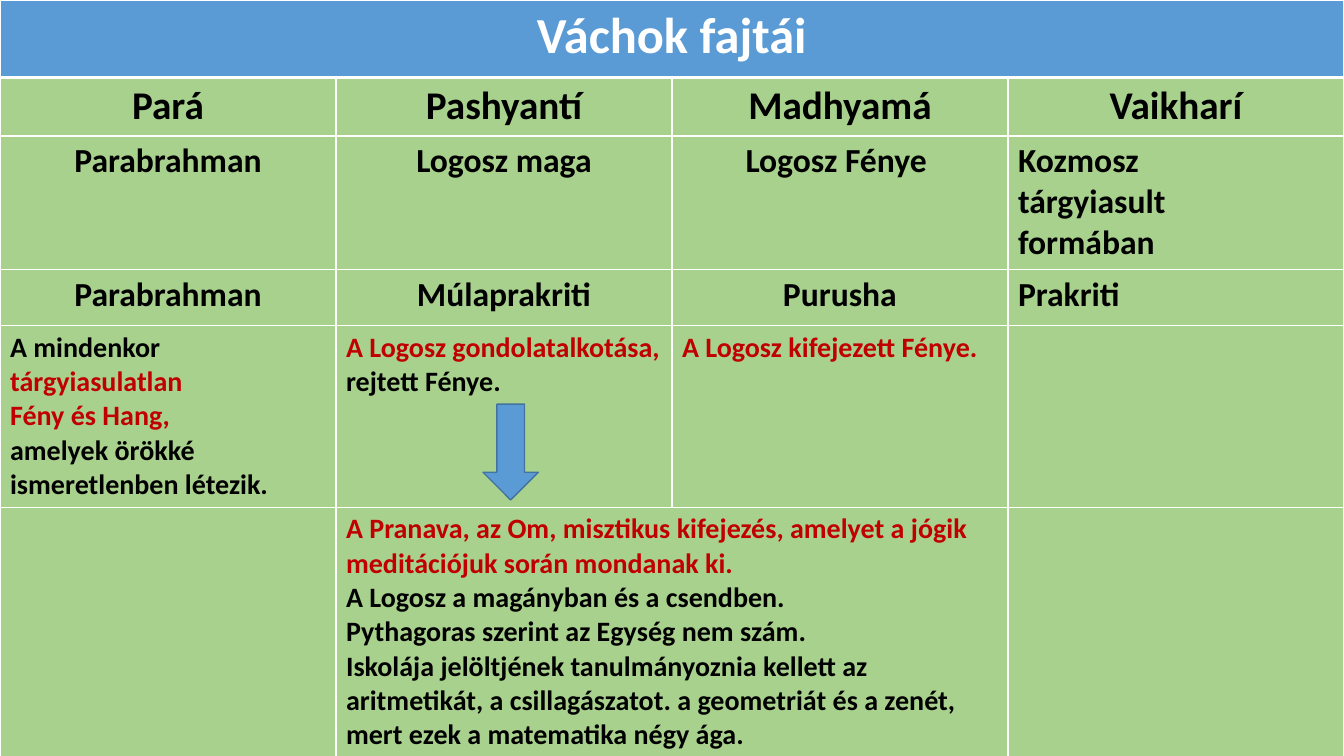
from lxml import etree
from pptx import Presentation
from pptx import util as u
from pptx.dml.color import RGBColor
from pptx.enum import shapes, text
from pptx.oxml import ns

HUES = {"sky": "00B0F0", "blue": "5B9BD5", "edge": "43739E", "green": "A9D18E",
        "white": "FFFFFF", "black": "000000", "red": "C00000"}
TITLE = "Váchok fajtái"
HIGHS = [0.77, 0.58, 1.32, 0.56, 1.8, 2.47]
SIZES = [36, 28, 24, 24, 20, 20]
ROWS = [
    [TITLE, "", "", ""],
    ["Pará", "Pashyantí", "Madhyamá", "Vaikharí"],
    ["Parabrahman", "Logosz maga", "Logosz Fénye ", "Kozmosz\ntárgyiasult\nformában"],
    ["Parabrahman", "Múlaprakriti", "Purusha", "Prakriti"],
    ["A mindenkor *tárgyiasulatlan\n*Fény és Hang,\namelyek örökké\nismeretlenben létezik.",
     "*A Logosz gondolatalkotása,\nrejtett Fénye.",
     "*A Logosz kifejezett Fénye.", ""],
    ["", "*A Pranava, az Om, misztikus kifejezés, amelyet a jógik meditációjuk során mondanak ki.\n"
     "A Logosz a magányban és a csendben.\n"
     "Pythagoras szerint az Egység nem szám.\n"
     "Iskolája jelöltjének tanulmányoznia kellett az aritmetikát, a csillagászatot. "
     "a geometriát és a zenét,\n"
     "mert ezek a matematika négy ága.", "", ""],
]


def paint(fill, hue):
    """Fill solidly with a named colour."""
    fill.solid()
    fill.fore_color.rgb = RGBColor.from_string(HUES[hue])


def write(cell, words, size, hue, align):
    """Write lines into a cell; text after an asterisk is red."""
    frame = cell.text_frame
    for n, line in enumerate(words.split("\n")):
        para = frame.add_paragraph() if n else frame.paragraphs[0]
        para.alignment = align
        para.font.size = u.Pt(size)
        para.font.bold = True
        para.font.name = "Calibri"
        for part, tone in zip(line.split("*"), (hue, "red")):
            if part:
                run = para.add_run()
                run.text = part
                run.font.color.rgb = RGBColor.from_string(HUES[tone])


def border(cell, row):
    """Draw white cell borders, thick beneath the title row."""
    props = cell._tc.get_or_add_tcPr()
    thick = {(0, "B"), (1, "T")}
    for n, side in enumerate("LRTB"):
        line = etree.Element(ns.qn("a:ln" + side))
        line.set("w", str(u.Pt(3 if (row, side) in thick else 1)))
        solid = etree.SubElement(line, ns.qn("a:solidFill"))
        etree.SubElement(solid, ns.qn("a:srgbClr"), val=HUES["white"])
        props.insert(n, line)


def chart(slide, left, top, width, height):
    """Place the table of kinds of Vách in the given box."""
    table = slide.shapes.add_table(len(ROWS), 4, u.Inches(left), u.Inches(top),
                                   u.Inches(width), u.Inches(height)).table
    for col in table.columns:
        col.width = u.Inches(width / 4)
    for r, (high, size, row) in enumerate(zip(HIGHS, SIZES, ROWS)):
        table.rows[r].height = u.Inches(height * high / sum(HIGHS))
        for c, words in enumerate(row):
            cell = table.cell(r, c)
            paint(cell.fill, "green" if r else "blue")
            border(cell, r)
            mid = r < 2 or (r < 4 and c < 3)
            align = text.PP_ALIGN.CENTER if mid else text.PP_ALIGN.LEFT
            write(cell, words, size, "black" if r else "white", align)
    table.cell(0, 0).merge(table.cell(0, 3))
    table.cell(5, 1).merge(table.cell(5, 2))


def arrow(slide, left, top, width, height):
    """Place the downward arrow in the given box."""
    shape = slide.shapes.add_shape(shapes.MSO_SHAPE.DOWN_ARROW, u.Inches(left),
                                   u.Inches(top), u.Inches(width), u.Inches(height))
    shape.shadow.inherit = False
    paint(shape.fill, "blue")
    paint(shape.line.fill, "edge")
    shape.line.width = u.Pt(1)


def ground(slide):
    """Tint the slide background with translucent sky blue."""
    paint(slide.background.fill, "sky")
    hue = slide.element.xpath(".//p:bg//a:srgbClr")[0]
    etree.SubElement(hue, ns.qn("a:alpha"), val="16000")


def main():
    """Build and save the slide."""
    deck = Presentation()
    deck.slide_width, deck.slide_height = u.Inches(13.33), u.Inches(7.5)
    slide = deck.slides.add_slide(deck.slide_layouts[6])
    ground(slide)
    chart(slide, 0, 0, 13.33, 7.5)
    arrow(slide, 4.79, 4.01, 0.55, 0.95)
    deck.save("out.pptx")


if __name__ == "__main__":
    main()
